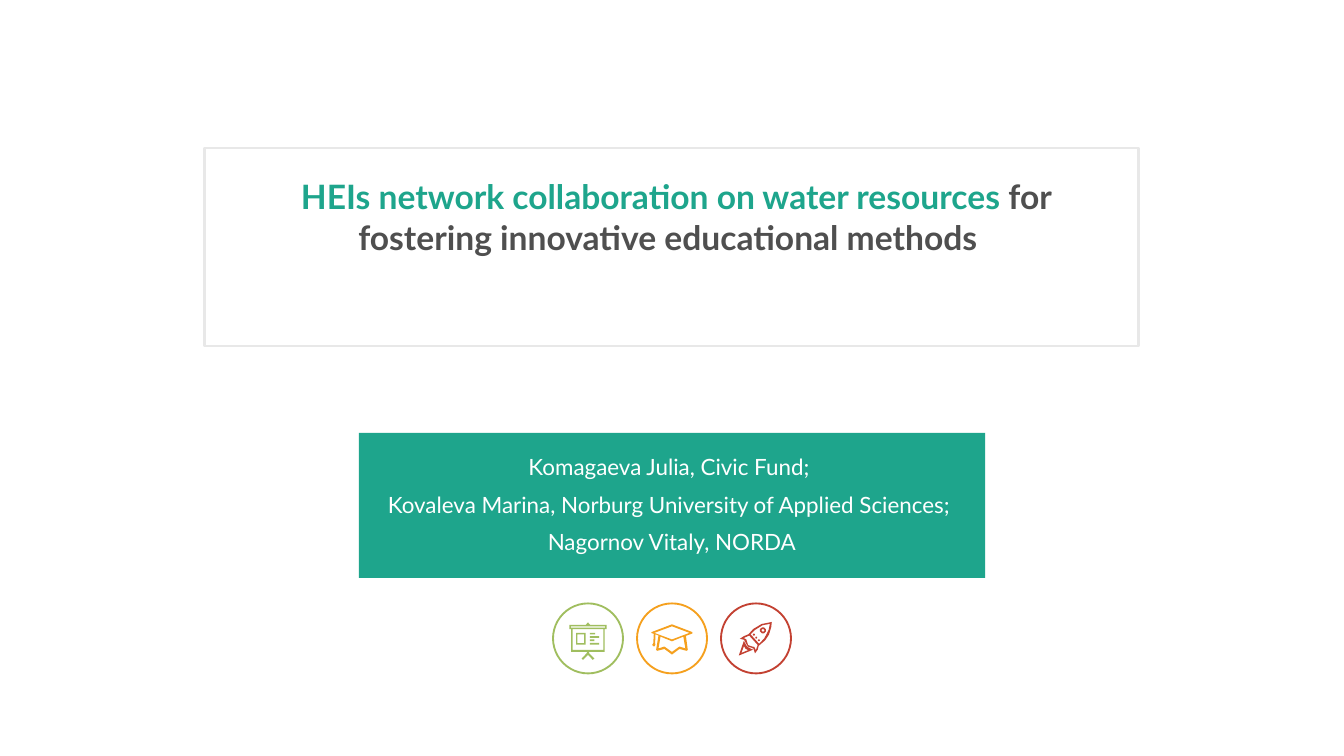
"""Build a title slide with a framed heading, an author panel and three icons."""
from pptx import Presentation
from pptx.dml.color import RGBColor
from pptx.enum.shapes import MSO_SHAPE as Shape
from pptx.enum.text import PP_ALIGN as Align
from pptx.util import Pt

FONT = "Lato"
TEAL, GRAY, WHITE, PALE = "1EA58C", "4F4F4F", "FFFFFF", "E8E8E8"

TITLE = [
    (" HEIs network collaboration on water resources ", TEAL),
    ("for fostering innovative educational methods ", GRAY),
]
AUTHORS = [
    "Komagaeva Julia, Civic Fund; ",
    "Kovaleva Marina, Norburg University of Applied Sciences; ",
    "Nagornov Vitaly, NORDA",
]

FRAME_BOX = (109.6, 79.2, 500.4, 106)
TITLE_BOX = (126, 94.4, 468, 44)
PANEL_BOX = (192.24, 231.84, 335.5, 77.8)
AUTHORS_BOX = (200.9, 243.4, 318.2, 54.7)
CIRCLE_SIZE, CIRCLE_STEP = 37.5, 45
CENTER_X, CENTER_Y = 360, 342


def box(left, top, right, bottom):
    return [(left, top), (right, top), (right, bottom), (left, bottom)]


def octagon(x, y, radius):
    cut = radius * 0.4
    return [(x - cut, y - radius), (x + cut, y - radius), (x + radius, y - cut),
            (x + radius, y + cut), (x + cut, y + radius), (x - cut, y + radius),
            (x - radius, y + cut), (x - radius, y - cut)]


BOARD = [
    [(-10, -7.2), (-1.2, -7.2), (0, -8.6), (1.2, -7.2), (10, -7.2), (10, -5),
     (9, -5), (9, 7.2), (0.6, 7.2), (0.6, 7.9), (3.4, 10.8), (2.6, 11.5),
     (0, 8.8), (-2.6, 11.5), (-3.4, 10.8), (-0.6, 7.9), (-0.6, 7.2),
     (-9, 7.2), (-9, -5), (-10, -5)],
    box(-9.2, -6.4, 9.2, -5.8),
    box(-8.2, -5, 8.2, 6.2),
    box(-6.4, -2.9, -1.3, 3.4),
    box(-5.6, -2.1, -2.1, 2.6),
    *[box(1, y, right, y + 0.9)
      for y, right in [(-3, 3.8), (-1.2, 6), (0.6, 3.4), (2.4, 6)]],
]
CAP = [
    [(0, -7.5), (11, -3.3), (11, -2.6), (7.5, -1.3), (8.5, 6.2), (7.9, 6.7),
     (4, 5.7), (0, 8.7), (-4, 5.7), (-7.9, 6.7), (-8.5, 6.2), (-7.2, -1.5),
     (-8.8, -2.1), (-9, 2.7), (-8.8, 3.6), (-9.6, 4.4), (-10.6, 3.6),
     (-10, 2.6), (-9.7, -2.4), (-11, -2.8), (-11, -3.3)],
    [(0, -6.4), (9.4, -2.9), (0, 0.6), (-9.4, -2.9)],
    [(-6.1, -0.9), (0, 1.6), (6.1, -0.9), (7.2, 5.4), (4, 4.4), (0, 7.3),
     (-4, 4.4), (-7.2, 5.4)],
]
ROCKET = [
    [(8.5, -8.8), (8.2, -6), (7, -2), (5, 1), (1.5, 4), (1, 6), (-0.5, 8),
     (-1.3, 5.5), (-2.3, 5), (-4.3, 4.4), (-5.8, 1.8), (-6.3, 0.8),
     (-8.6, 0.2), (-6.5, -1.2), (-4, -2.2), (-1.5, -5), (3, -7.7)],
    [(7.5, -7.8), (6.8, -4.5), (4.5, 0), (1.7, 2.9), (-2.9, -2.2),
     (-0.5, -4.5), (3.5, -7)],
    [(-3.6, -1.5), (-6.5, -0.2), (-5.2, 0.5), (-4.8, 1.7), (-4.2, 3.6),
     (-2.2, 4.3), (-0.9, 4.6), (0, 6.3), (0.8, 4), (0.9, 3.5)],
    [(-6.5, 1.4), (-9.2, 9.2), (-1.4, 6), (-2.2, 5.8), (-4.8, 4.4)],
    [(-6.4, 4.1), (-7.8, 7.8), (-4.2, 6.3), (-5.6, 5.5)],
    octagon(3.8, -4.3, 1.6),
    octagon(3.8, -4.3, 0.7),
    *[octagon(x, y, 0.5) for x, y in [(-1.1, -2), (0.2, -0.4), (1.6, 1)]],
]
ICONS = [(BOARD, "A0BE5F"), (CAP, "F5A01E"), (ROCKET, "C34132")]


def rgb(color):
    return RGBColor.from_string(color)


def paint(shape, fill=None, line=None, width=1):
    shape.shadow.inherit = False
    if fill:
        shape.fill.solid()
        shape.fill.fore_color.rgb = rgb(fill)
    else:
        shape.fill.background()
    if line:
        shape.line.color.rgb = rgb(line)
        shape.line.width = Pt(width)
    else:
        shape.line.fill.background()


def add_preset(slide, kind, bounds, **style):
    paint(slide.shapes.add_shape(kind, *map(Pt, bounds)), **style)


def add_text(slide, bounds):
    frame = slide.shapes.add_textbox(*map(Pt, bounds)).text_frame
    frame.word_wrap = True
    frame.margin_left = frame.margin_right = 0
    frame.margin_top = frame.margin_bottom = 0
    return frame


def style_run(run, size, color, bold=False):
    run.font.name = FONT
    run.font.size = Pt(size)
    run.font.bold = bold
    run.font.color.rgb = rgb(color)


def add_icon(slide, outlines, color, x, y):
    tenths = [[(round(px * 10), round(py * 10)) for px, py in outline]
              for outline in outlines]
    builder = slide.shapes.build_freeform(*tenths[0][0], scale=Pt(0.1))
    for number, outline in enumerate(tenths):
        if number:
            builder.move_to(*outline[0])
        builder.add_line_segments(outline[1:], close=True)
    paint(builder.convert_to_shape(Pt(x), Pt(y)), fill=color)


def main():
    deck = Presentation()
    deck.slide_width, deck.slide_height = Pt(720), Pt(405)
    slide = deck.slides.add_slide(deck.slide_layouts[6])

    heading = add_text(slide, TITLE_BOX).paragraphs[0]
    heading.alignment = Align.CENTER
    for words, color in TITLE:
        run = heading.add_run()
        run.text = words
        style_run(run, 18, color, bold=True)

    add_preset(slide, Shape.RECTANGLE, PANEL_BOX, fill=TEAL)
    authors = add_text(slide, AUTHORS_BOX)
    authors.text = "\n".join(AUTHORS)
    for author in authors.paragraphs:
        author.alignment = Align.CENTER
        author.line_spacing = Pt(14)
        author.space_after = Pt(6)
        style_run(author.runs[0], 12, WHITE)

    for number, (outlines, color) in enumerate(ICONS):
        x = CENTER_X + (number - 1) * CIRCLE_STEP
        add_icon(slide, outlines, color, x, CENTER_Y)
        radius = CIRCLE_SIZE / 2
        circle = (x - radius, CENTER_Y - radius, CIRCLE_SIZE, CIRCLE_SIZE)
        add_preset(slide, Shape.OVAL, circle, line=color)

    add_preset(slide, Shape.RECTANGLE, FRAME_BOX, line=PALE, width=1.2)
    deck.save("out.pptx")


if __name__ == "__main__":
    main()
